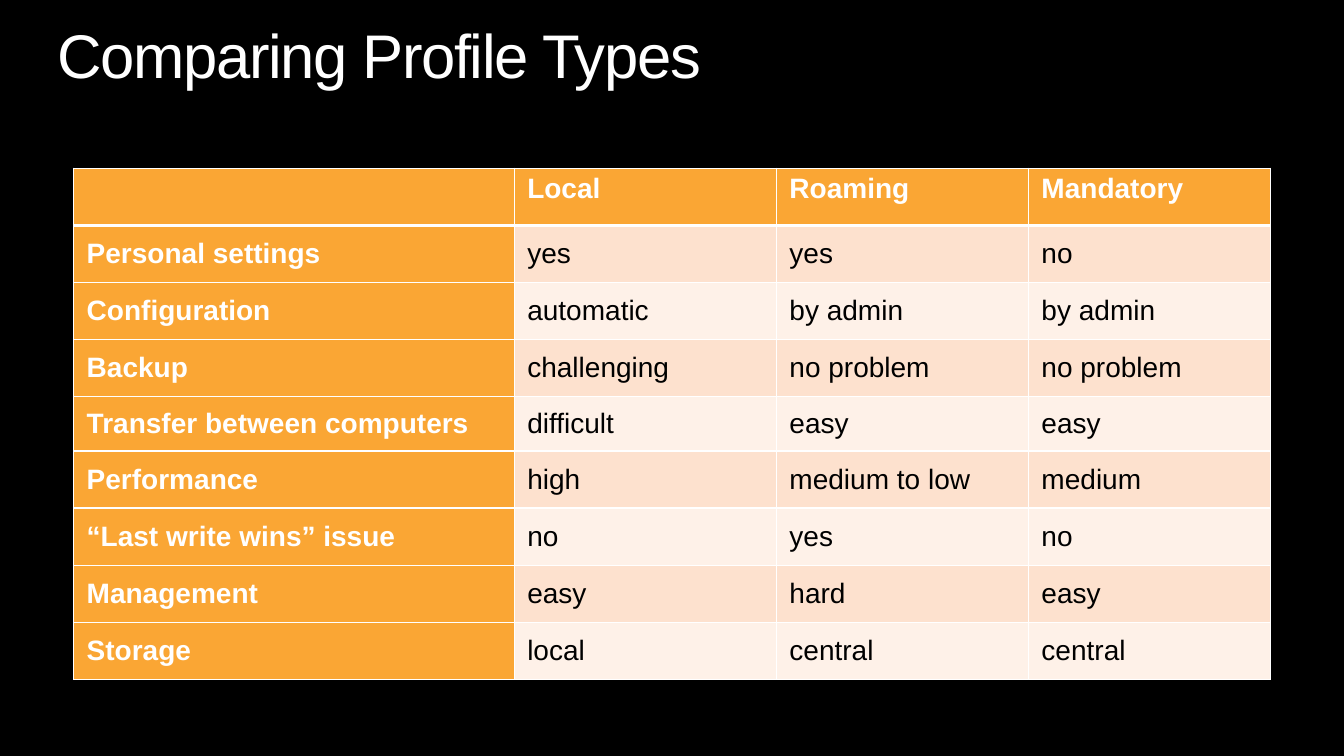
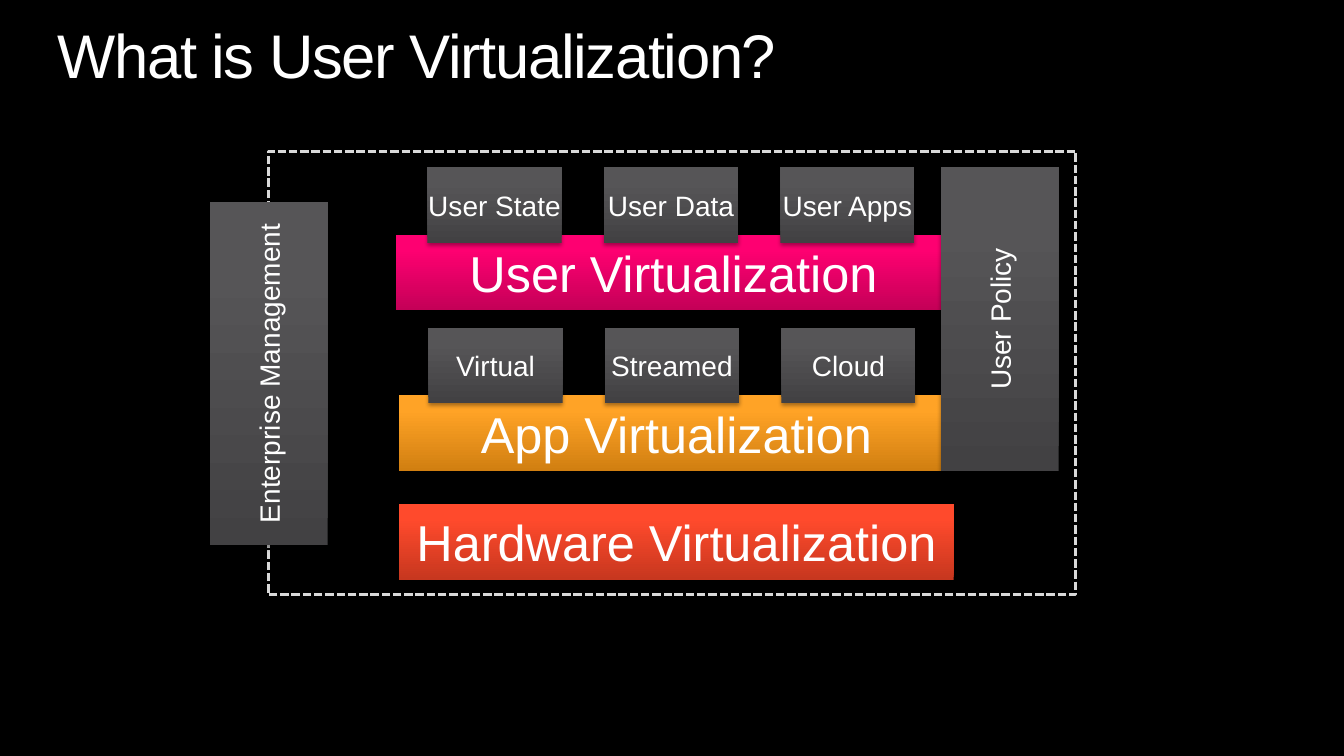
import pptx
import pptx.util
import pptx.dml.color
import pptx.enum.shapes
import pptx.enum.text
import pptx.enum.dml
import pptx.oxml
import pptx.oxml.ns
from lxml import etree

Inches, Pt = pptx.util.Inches, pptx.util.Pt
qn = pptx.oxml.ns.qn
ALIGN, ANCHOR = pptx.enum.text.PP_ALIGN, pptx.enum.text.MSO_ANCHOR

FONT = "Arial"
HEX = {
    "back": "000000", "white": "FFFFFF", "black": "000000", "dash": "D9D9D9",
    "head": "FAA634", "odd": "FDE1CE", "even": "FEF1E8",
}
# Gradient stops from the bottom edge to the top edge
FADES = {
    "red": ("C7371F", "FF4A2C", "FF4B2E"),
    "orange": ("D17F11", "FFA326", "FFA327"),
    "pink": ("C40057", "FE0071", "FF0071"),
    "grey": ("424143", "565557", "575558"),
}
STOPS = (0, 80, 100)

TYPES = {
    "title": "Comparing Profile Types",
    "at": (0.73, 1.67, 11.87, 5.07),
    "cols": (4.37, 2.6, 2.5, 2.4),
    "short": {4: 0.54},
    "rows": [
        ("", "Local", "Roaming", "Mandatory"),
        ("Personal settings", "yes", "yes", "no"),
        ("Configuration", "automatic", "by admin", "by admin"),
        ("Backup", "challenging", "no problem", "no problem"),
        ("Transfer between computers", "difficult", "easy", "easy"),
        ("Performance", "high", "medium to low", "medium"),
        ("“Last write wins” issue", "no", "yes", "no"),
        ("Management", "easy", "hard", "easy"),
        ("Storage", "local", "central", "central"),
    ],
}

LAYERS = {
    "title": "What is User Virtualization?",
    "bars": [
        ("Hardware Virtualization", "red", 3.96, 5),
        ("App Virtualization", "orange", 3.96, 3.92),
        ("User Virtualization", "pink", 3.93, 2.33),
    ],
    "tiles": [
        (4.25, 3.25, ("Virtual", "Streamed", "Cloud")),
        (4.24, 1.66, ("User State", "User Data", "User Apps")),
    ],
    "policy": ("User Policy", (9.33, 1.66, 1.17, 3.01)),
    "frame": (2.66, 1.5, 8.01, 4.4),
    "manage": ("Enterprise Management", (2.08, 2, 1.17, 3.41)),
}
BAR, TILE, STEP = (5.5, 0.75), (1.33, 0.75), 1.75


def rgb(name):
    return pptx.dml.color.RGBColor.from_string(HEX[name])


def node(up, tag, **attrs):
    return etree.SubElement(up, qn(tag), {k: str(v) for k, v in attrs.items()})


def write(para, text, size, color="white", bold=False):
    run = para.add_run()
    run.text = text
    font = run.font
    font.name, font.size, font.bold = FONT, Pt(size), bold
    font.color.rgb = rgb(color)
    return run


def clear(frame):
    frame.margin_left = frame.margin_right = 0
    frame.margin_top = frame.margin_bottom = 0


def start(deck, title):
    """Add a slide with the shared background and title."""
    slide = deck.slides.add_slide(deck.slide_layouts[6])
    fill = slide.background.fill
    fill.solid()
    fill.fore_color.rgb = rgb("back")
    box = slide.shapes.add_textbox(*map(Inches, (0.57, 0.25, 12.19, 0.67)))
    frame = box.text_frame
    frame.word_wrap = True
    clear(frame)
    para = frame.paragraphs[0]
    para.line_spacing = 0.9
    run = write(para, title, 44)
    run.font._element.set("spc", "-100")
    return slide


def edge(cell, widths):
    """Draw white borders; widths go left, right, top, bottom."""
    props = cell._tc.get_or_add_tcPr()
    for i, (side, width) in enumerate(zip("LRTB", widths)):
        line = etree.Element(qn("a:ln" + side), w=str(Pt(width)))
        node(node(line, "a:solidFill"), "a:srgbClr", val=HEX["white"])
        props.insert(i, line)


def compare(deck):
    slide = start(deck, TYPES["title"])
    rows, cols, short = TYPES["rows"], TYPES["cols"], TYPES["short"]
    left, top, wide, high = TYPES["at"]
    table = slide.shapes.add_table(
        len(rows), len(cols), *map(Inches, (left, top, wide, high))).table
    for col, width in zip(table.columns, cols):
        col.width = Inches(width)
    even = (high - sum(short.values())) / (len(rows) - len(short))
    for r, texts in enumerate(rows):
        table.rows[r].height = Inches(short.get(r, even))
        for c, text in enumerate(texts):
            cell = table.cell(r, c)
            label = r == 0 or c == 0
            cell.margin_left = cell.margin_right = Inches(0.13)
            cell.margin_top = cell.margin_bottom = Inches(0.05)
            cell.vertical_anchor = ANCHOR.MIDDLE if r else ANCHOR.TOP
            cell.fill.solid()
            cell.fill.fore_color.rgb = rgb(
                "head" if label else "odd" if r % 2 else "even")
            edge(cell, (1, 1, 3 if r == 1 else 1, 3 if r == 0 else 1))
            if text:
                write(cell.text_frame.paragraphs[0], text, 20,
                      "white" if label else "black", label)


def shade(shape):
    shape.shadow.inherit = False
    list_ = shape._element.spPr.find(qn("a:effectLst"))
    drop = node(list_, "a:outerShdw", blurRad=Pt(3.1), dist=Pt(1.8),
                dir=90 * 60000, algn="ctr", rotWithShape=0)
    color = node(drop, "a:srgbClr", val=HEX["black"])
    node(color, "a:alpha", val=35000)


def rect(slide, at):
    return slide.shapes.add_shape(
        pptx.enum.shapes.MSO_SHAPE.RECTANGLE, *map(Inches, at))


def block(slide, text, at, fade="grey", size=20, turn=False):
    """Add a shaded block with centred text, turned upward if asked."""
    shape = rect(slide, at)
    shape.fill.gradient()
    shape.fill.gradient_angle = 90
    stops = shape._element.spPr.find(".//" + qn("a:gsLst"))
    for old in list(stops):
        stops.remove(old)
    for pos, color in zip(STOPS, FADES[fade]):
        node(node(stops, "a:gs", pos=pos * 1000), "a:srgbClr", val=color)
    shape.line.fill.background()
    shade(shape)
    frame = shape.text_frame
    clear(frame)
    frame.word_wrap = turn
    frame.vertical_anchor = ANCHOR.MIDDLE
    if turn:
        frame._txBody.bodyPr.set("vert", "vert270")
    para = frame.paragraphs[0]
    para.alignment = ALIGN.CENTER
    write(para, text, size)


def stack(deck):
    slide = start(deck, LAYERS["title"])
    for text, fade, left, top in LAYERS["bars"]:
        block(slide, text, (left, top, *BAR), fade, 36)
    for left, top, texts in LAYERS["tiles"]:
        for i, text in enumerate(texts):
            block(slide, text, (left + i * STEP, top, *TILE))
    block(slide, *LAYERS["policy"], turn=True)
    frame = rect(slide, LAYERS["frame"])
    frame.fill.background()
    frame.line.color.rgb = rgb("dash")
    frame.line.width = Pt(2)
    frame.line.dash_style = pptx.enum.dml.MSO_LINE.SQUARE_DOT
    shade(frame)
    block(slide, *LAYERS["manage"], turn=True)


def main():
    deck = pptx.Presentation()
    deck.slide_width, deck.slide_height = Inches(13.33), Inches(7.5)
    compare(deck)
    stack(deck)
    deck.save("out.pptx")


if __name__ == "__main__":
    main()
